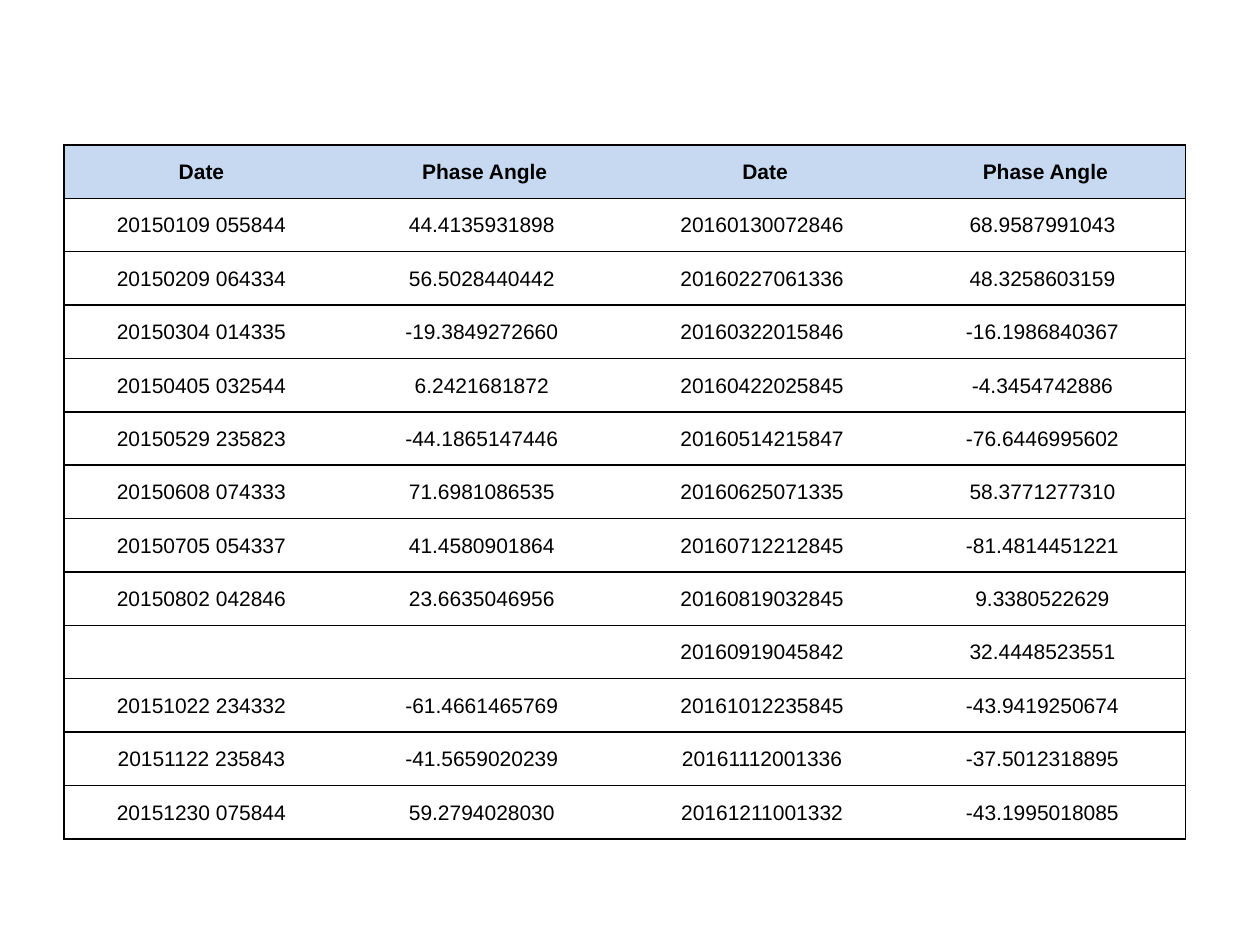
from dataclasses import dataclass

from lxml.etree import SubElement
from pptx import Presentation
from pptx.dml.color import RGBColor as Color
from pptx.enum.text import MSO_ANCHOR as Anchor, PP_ALIGN as Align
from pptx.oxml.ns import qn
from pptx.util import Inches, Pt


@dataclass(frozen=True)
class Theme:
    font: str = "Arial"
    size: float = 12
    ink: str = "000000"
    header_fill: str = "C6D9F1"
    body_fill: str = "FFFFFF"
    border_width: float = 1


THEME = Theme()
SLIDE_WIDTH, SLIDE_HEIGHT = Inches(10), Inches(7.5)
TABLE_LEFT, TABLE_TOP = Inches(0.51), Inches(1.15)
TABLE_WIDTH, TABLE_HEIGHT = Inches(8.9), Inches(5.51)

CELL_FORMAT = {
    "vertical_anchor": Anchor.MIDDLE,
    "margin_left": Inches(0.01),
    "margin_right": Inches(0.01),
    "margin_top": Inches(0.01),
    "margin_bottom": 0,
}

HEADER = ("Date ", "Phase Angle", "Date", "Phase Angle")
MEASUREMENTS = [
    ("20150109 055844", "44.4135931898", "20160130072846", "68.9587991043"),
    ("20150209 064334", "56.5028440442", "20160227061336", "48.3258603159"),
    ("20150304 014335", "-19.3849272660", "20160322015846", "-16.1986840367"),
    ("20150405 032544", "6.2421681872", "20160422025845", "-4.3454742886"),
    ("20150529 235823", "-44.1865147446", "20160514215847", "-76.6446995602"),
    ("20150608 074333", "71.6981086535", "20160625071335", "58.3771277310"),
    ("20150705 054337", "41.4580901864", "20160712212845", "-81.4814451221"),
    ("20150802 042846", "23.6635046956", "20160819032845", "9.3380522629"),
    ("", "", "20160919045842", "32.4448523551"),
    ("20151022 234332", "-61.4661465769", "20161012235845", "-43.9419250674"),
    ("20151122 235843", "-41.5659020239", "20161112001336", "-37.5012318895"),
    ("20151230 075844", "59.2794028030", "20161211001332", "-43.1995018085"),
]


def set_attributes(target, values):
    for name, value in values.items():
        setattr(target, name, value)


def set_borders(cell, visible):
    """Draw the sides named in visible and clear the others."""
    properties = cell._tc.get_or_add_tcPr()
    for side in "LRTB":
        line = SubElement(properties, qn(f"a:ln{side}"))
        if side in visible:
            line.set("w", str(Pt(THEME.border_width)))
            fill = SubElement(line, qn("a:solidFill"))
            SubElement(fill, qn("a:srgbClr")).set("val", THEME.ink)
        else:
            line.set("w", "0")
            SubElement(line, qn("a:noFill"))


def write_cell(cell, text, fill, bold):
    set_attributes(cell, CELL_FORMAT)
    paragraph = cell.text_frame.paragraphs[0]
    paragraph.alignment = Align.CENTER
    font = paragraph.font
    if text:
        run = paragraph.add_run()
        run.text = text
        font = run.font
    set_attributes(font, {"name": THEME.font, "size": Pt(THEME.size), "bold": bold})
    font.color.rgb = Color.from_string(THEME.ink)
    cell.fill.solid()
    cell.fill.fore_color.rgb = Color.from_string(fill)


def add_measurement_table(slide):
    # Each reading keeps the trailing space that offsets it from the headings
    readings = [[f"{text} " if text else "" for text in row] for row in MEASUREMENTS]
    rows = [HEADER, *readings]
    last_column = len(HEADER) - 1
    table = slide.shapes.add_table(
        len(rows), len(HEADER), TABLE_LEFT, TABLE_TOP, TABLE_WIDTH, TABLE_HEIGHT
    ).table
    table.horz_banding = False

    for row_index, row in enumerate(rows):
        is_header = row_index == 0
        fill = THEME.header_fill if is_header else THEME.body_fill
        for column_index, text in enumerate(row):
            cell = table.cell(row_index, column_index)
            # Horizontal rules everywhere, vertical ones on the outer edges only
            outer = {0: "L", last_column: "R"}.get(column_index, "")
            set_borders(cell, "TB" + outer)
            write_cell(cell, text, fill, is_header)


def main():
    presentation = Presentation()
    set_attributes(
        presentation, {"slide_width": SLIDE_WIDTH, "slide_height": SLIDE_HEIGHT}
    )
    slide = presentation.slides.add_slide(presentation.slide_layouts[6])
    add_measurement_table(slide)
    presentation.save("out.pptx")


if __name__ == "__main__":
    main()
